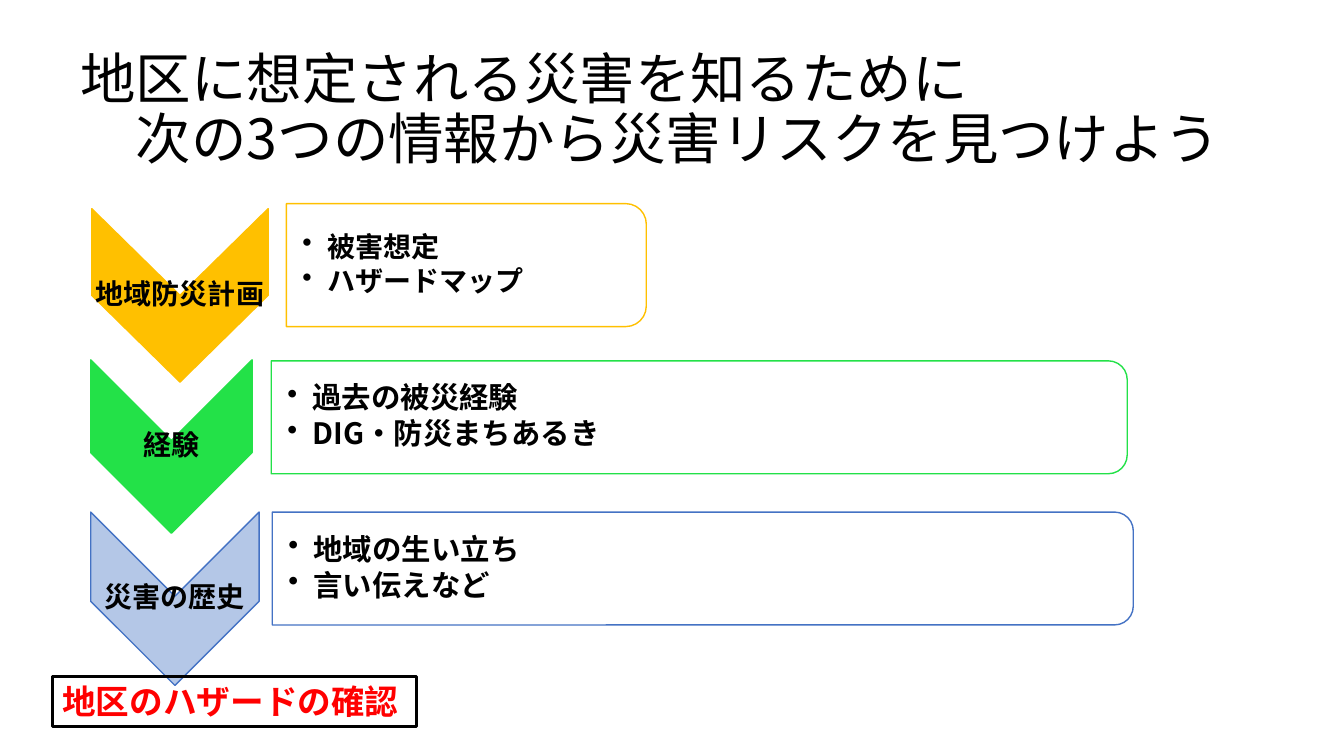
from collections import namedtuple

from lxml import etree
from pptx import Presentation
from pptx.dml.color import RGBColor
from pptx.enum.shapes import MSO_SHAPE as Preset
from pptx.enum.text import MSO_ANCHOR as Anchor, PP_ALIGN as Align
from pptx.oxml.ns import qn
from pptx.util import Pt

SCALE = 9144  # EMU in one px, 100 px to the inch
FONT = "Noto Sans CJK JP"
COLORS = {
    "black": "000000", "white": "FFFFFF", "red": "FF0000", "amber": "FFC000",
    "green": "23E148", "blue": "4472C4", "pale_blue": "B4C7E7",
}
Box = namedtuple("Box", "left top width height")

TITLE = ["地区に想定される災害を知るために", "　次の3つの情報から災害リスクを見つけよう"]
# arrow box, panel box, arrow fill, line, label, items, item size
SOURCES = [
    (Box(91, 207, 175, 172), Box(284, 202, 357, 122), "amber", "amber",
     "地域防災計画", ["被害想定", "ハザードマップ"], 20),
    (Box(90, 357, 160, 172), Box(269, 358, 849, 112), "green", "green",
     "経験", ["過去の被災経験", "DIG・防災まちあるき"], 21),
    (Box(90, 508, 167, 172), Box(270, 508, 854, 112), "pale_blue", "blue",
     "災害の歴史", ["地域の生い立ち", "言い伝えなど"], 21),
]


def px(value):
    return round(value * SCALE)


def color(name):
    return RGBColor.from_string(COLORS[name])


def add_span(para, text, size, tint="black", bold=True):
    span = para.add_run()
    span.text = text
    span.font.size = Pt(size)
    span.font.bold = bold
    span.font.name = FONT
    span.font.color.rgb = color(tint)
    east_asian = etree.SubElement(span._r.get_or_add_rPr(), qn("a:ea"))
    east_asian.set("typeface", FONT)


def add_text_frame(page, box, margins=(10, 5, 10, 5)):
    frame = page.shapes.add_textbox(*map(px, box)).text_frame
    frame.word_wrap = True
    frame.vertical_anchor = Anchor.MIDDLE
    (frame.margin_left, frame.margin_top,
     frame.margin_right, frame.margin_bottom) = map(px, margins)
    return frame


def add_bullet(para):
    properties = para._p.get_or_add_pPr()
    properties.set("marL", str(px(25)))
    properties.set("indent", str(px(-25)))
    etree.SubElement(properties, qn("a:buChar")).set("char", "•")


def add_preset(page, preset, box, line, weight=1, fill=None):
    shape = page.shapes.add_shape(preset, *map(px, box))
    shape.shadow.inherit = False
    if fill:
        shape.fill.solid()
        shape.fill.fore_color.rgb = color(fill)
    else:
        shape.fill.background()
    shape.line.color.rgb = color(line)
    shape.line.width = Pt(weight)
    return shape


def add_turned(page, preset, box, line, fill):
    """Add a shape turned by 90 degrees that fills the box as seen."""
    shift = (box.width - box.height) / 2
    upright = Box(box.left + shift, box.top - shift, box.height, box.width)
    shape = add_preset(page, preset, upright, line, fill=fill)
    shape.rotation = 90
    return shape


def add_title(page, box):
    para = add_text_frame(page, box).paragraphs[0]
    para.line_spacing = 0.9
    for number, text in enumerate(TITLE):
        if number:
            para.add_line_break()
        add_span(para, text, 39.6, bold=False)


def add_arrow(page, box, fill, line, label):
    add_turned(page, Preset.CHEVRON, box, line, fill)
    para = add_text_frame(page, box, (1, 1, 1, 1)).paragraphs[0]
    para.alignment = Align.CENTER
    para.line_spacing = 0.9
    add_span(para, label, 20)


def add_panel(page, box, line, items, size):
    panel = add_turned(page, Preset.ROUND_2_SAME_RECTANGLE, box, line, "white")
    tint = panel.fill._xPr.find(qn("a:solidFill"))[0]
    etree.SubElement(tint, qn("a:alpha")).set("val", "90000")
    inner = Box(box.left, box.top + 5, box.width - 5, box.height - 10)
    frame = add_text_frame(page, inner, (16, 1, 1, 1))
    for number, item in enumerate(items):
        para = frame.add_paragraph() if number else frame.paragraphs[0]
        para.level = 1
        para.line_spacing = 0.9
        para.space_after = Pt(3)
        add_bullet(para)
        add_span(para, item, size)


def add_conclusion(page, box):
    frame = add_preset(page, Preset.RECTANGLE, box, "black", 2.25).text_frame
    frame.word_wrap = True
    frame.vertical_anchor = Anchor.TOP
    para = frame.paragraphs[0]
    para.alignment = Align.LEFT
    add_span(para, "地区のハザードの確認", 24, "red")


def main():
    deck = Presentation()
    deck.slide_width, deck.slide_height = px(1333), px(750)
    page = deck.slides.add_slide(deck.slide_layouts[6])
    add_title(page, Box(70, 68, 1242, 85))
    for arrow, panel, fill, line, label, items, size in SOURCES:
        add_arrow(page, arrow, fill, line, label)
        add_panel(page, panel, line, items, size)
    add_conclusion(page, Box(52, 671, 361, 50))
    deck.save("out.pptx")


if __name__ == "__main__":
    main()
